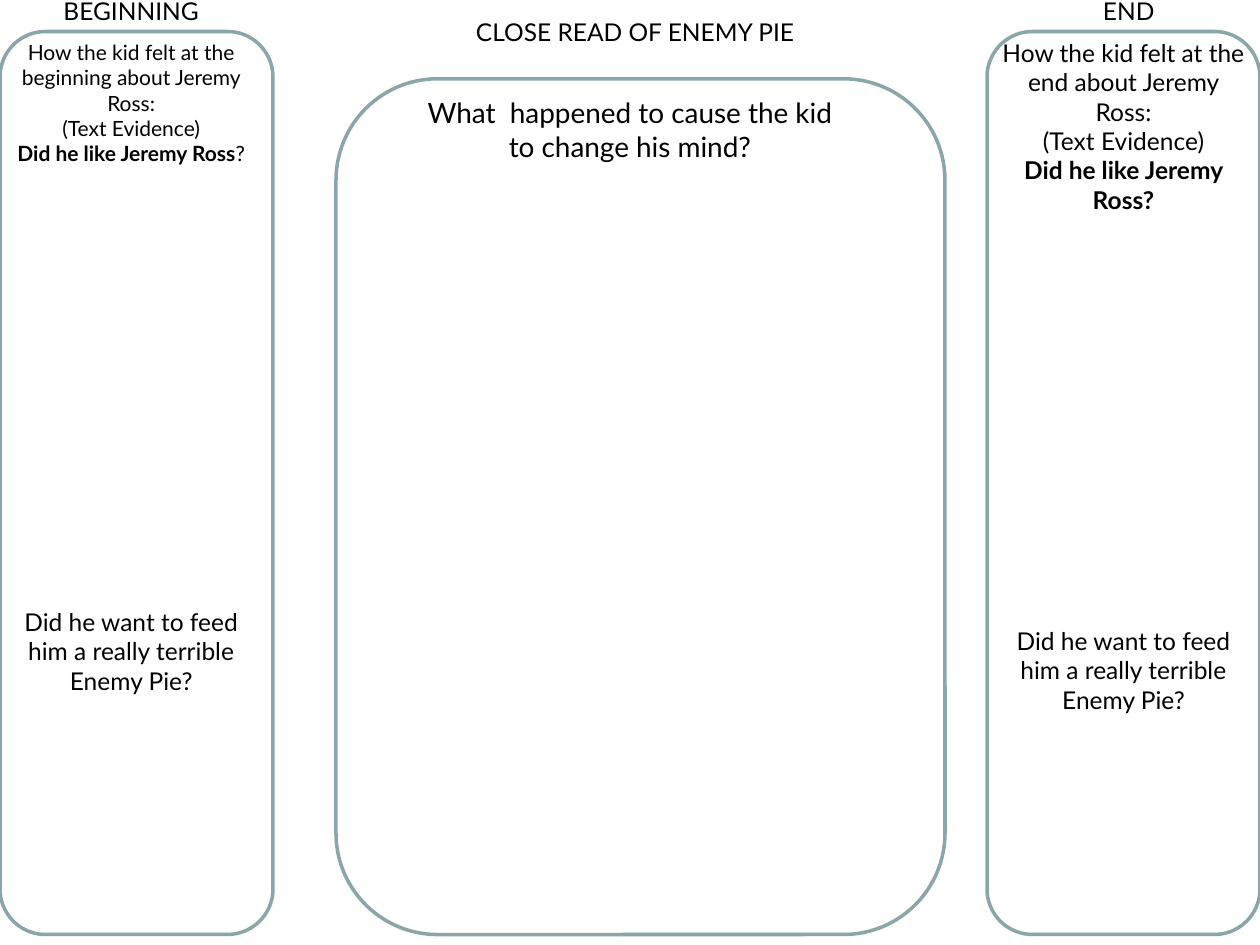
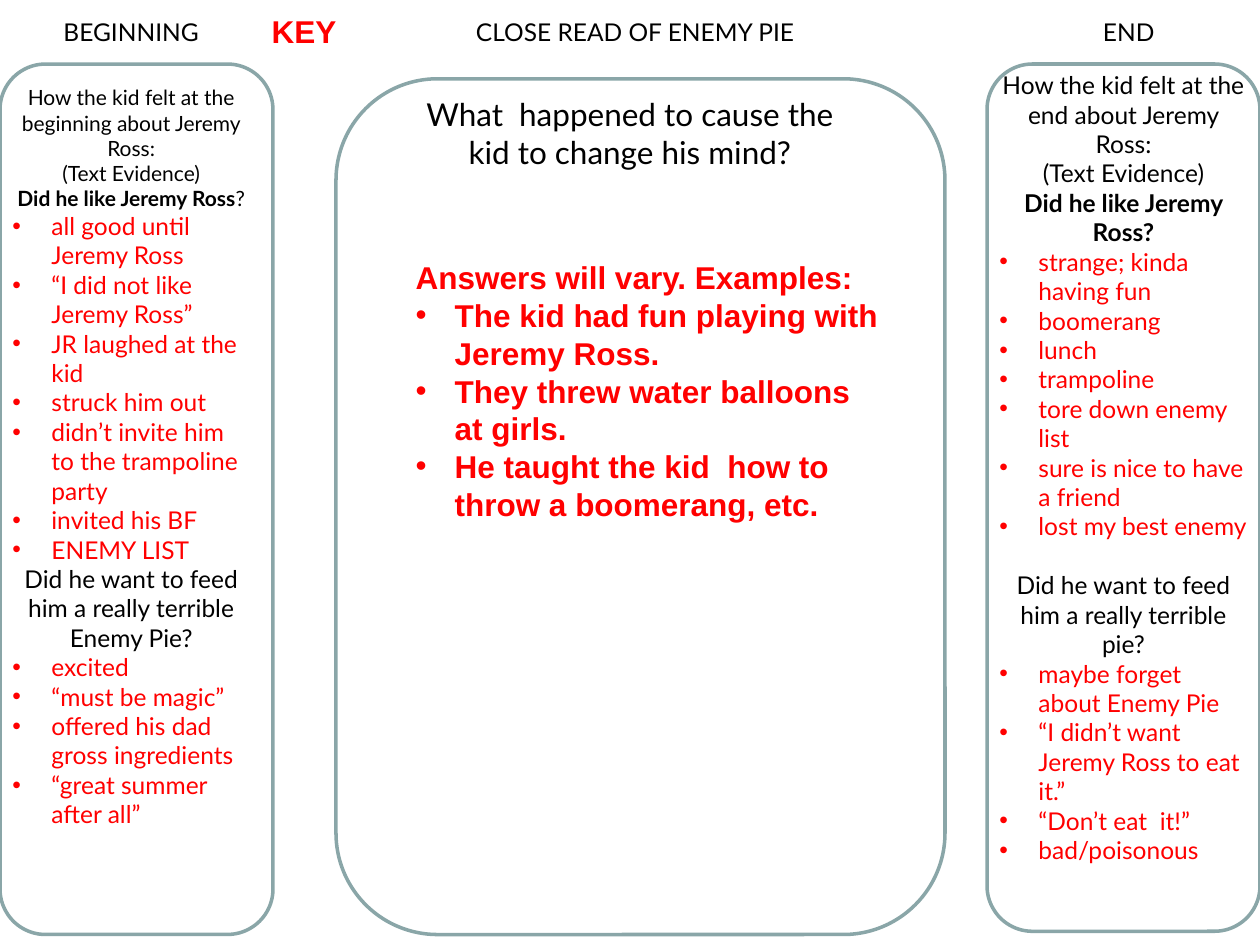
from dataclasses import dataclass, replace
from functools import partial

from lxml import etree
from pptx import Presentation
from pptx import util as u
from pptx.dml.color import RGBColor
from pptx.enum import shapes, text
from pptx.oxml.ns import qn

INK = RGBColor(0x00, 0x00, 0x00)
ANSWER_RED = RGBColor(0xFF, 0x00, 0x00)
FRAME_TEAL = RGBColor(0x8A, 0xA6, 0xA8)

# The page is a grid of 120 columns and 90 rows
WIDTH, HEIGHT = u.Inches(10), u.Inches(7.5)
COLS, ROWS = 120, 90
INDENT = u.Inches(0.31)
LINE_PT = 16.8  # height of one 14 pt line, in points
BOTTOM = 89     # row on which the frames end


@dataclass(frozen=True)
class Box:
    left: float
    top: float
    width: float
    height: float

    def inner(self, dx, dy, width, height):
        return Box(self.left + dx, self.top + dy, width, height)

    def place(self):
        return (int(self.left / COLS * WIDTH), int(self.top / ROWS * HEIGHT),
                int(self.width / COLS * WIDTH), int(self.height / ROWS * HEIGHT))


@dataclass(frozen=True)
class Line:
    words: str
    size: float = 14
    color: RGBColor = INK
    bold: bool = False
    face: str = "Lato"
    centred: bool = True
    bullet: bool = False
    lines_before: int = 0
    plain_end: str = ""


Answer = partial(Line, color=ANSWER_RED, centred=False, bullet=True)
BoldAnswer = partial(Answer, size=18, bold=True, face="Arial")


def add_bullet(paragraph):
    props = paragraph._p.get_or_add_pPr()
    props.set("marL", str(INDENT))
    props.set("indent", str(-INDENT))
    etree.SubElement(props, qn("a:buFont")).set("typeface", "Arial")
    etree.SubElement(props, qn("a:buChar")).set("char", "•")


def write(frame, lines, wrap=True):
    frame_format = {"word_wrap": wrap, "auto_size": text.MSO_AUTO_SIZE.NONE,
                    "vertical_anchor": text.MSO_ANCHOR.TOP}
    for name, value in frame_format.items():
        setattr(frame, name, value)
    for number, line in enumerate(lines):
        paragraph = frame.add_paragraph() if number else frame.paragraphs[0]
        paragraph.alignment = (text.PP_ALIGN.CENTER if line.centred
                               else text.PP_ALIGN.LEFT)
        if line.lines_before:
            paragraph.space_before = u.Pt(line.lines_before * LINE_PT)
        if line.bullet:
            add_bullet(paragraph)
        for words, bold in ((line.words, line.bold), (line.plain_end, False)):
            if not words:
                continue
            run = paragraph.add_run()
            run.text = words
            font_format = {"name": line.face, "size": u.Pt(line.size), "bold": bold}
            for name, value in font_format.items():
                setattr(run.font, name, value)
            run.font.color.rgb = line.color


def add_words(slide, box, lines, wrap=True):
    write(slide.shapes.add_textbox(*box.place()).text_frame, lines, wrap)


def add_frame(slide, box):
    frame = slide.shapes.add_shape(shapes.MSO_SHAPE.ROUNDED_RECTANGLE, *box.place())
    frame.shadow.inherit = False
    frame.fill.background()
    frame.line.color.rgb = FRAME_TEAL
    frame.line.width = u.Pt(2)


def add_title(slide, box):
    title = slide.shapes.title
    for name, value in zip(("left", "top", "width", "height"), box.place()):
        setattr(title, name, value)
    write(title.text_frame, [Line("CLOSE READ OF ENEMY PIE")])


def side_column(slide, box, heading, heading_box, words_box, lines):
    add_frame(slide, box)
    add_words(slide, heading_box, [Line(heading)])
    add_words(slide, words_box, lines)


def beginning_column(slide, box, heading_rise, words_drop, lines):
    side_column(slide, box, "BEGINNING", box.inner(0, -heading_rise, 25, 4),
                box.inner(0, words_drop, 25, box.height - words_drop), lines)


def end_column(slide, box, heading_rise, lines):
    side_column(slide, box, "END", box.inner(1, -heading_rise, 25, 4), box, lines)


def cause_panel(slide, box, size, answers=()):
    add_frame(slide, box)
    add_words(slide, box.inner(6, 1, 44, 8.5),
              [Line("What  happened to cause the kid to change his mind?", size)])
    if answers:
        add_words(slide, box.inner(6.4, 16.5, 46.5, 26.6), answers)


def worksheet(deck, top, heading_rise, words_drop, end_bottom, question_size,
              beginning, end, cause_answers=()):
    slide = deck.slides.add_slide(deck.slide_layouts[5])
    add_title(slide, Box(38, 1, 45, 4))
    beginning_column(slide, Box(0, top, 26, BOTTOM - top),
                     heading_rise, words_drop, beginning)
    cause_panel(slide, Box(32, 7.5, 58, BOTTOM - 7.5), question_size, cause_answers)
    end_column(slide, Box(94, top, 26, end_bottom - top), heading_rise, end)
    return slide


# Questions that both worksheets ask
EVIDENCE = Line("(Text Evidence)")
BEGINNING_FEELING = [
    Line("How the kid felt at the beginning about Jeremy Ross:", 12),
    replace(EVIDENCE, size=12),
    Line("Did he like Jeremy Ross", 12, bold=True, plain_end="?"),
]
END_FEELING = [
    Line("How the kid felt at the end about Jeremy Ross:"),
    EVIDENCE,
    Line("Did he like Jeremy Ross?", bold=True),
]
FEED = Line("Did he want to feed him a really terrible Enemy Pie?")
FEED_START = Line("Did he want to feed him a really terrible")

# Answers of the key
BEGINNING_LIKES = ["all good until Jeremy Ross", "“I did not like Jeremy Ross”",
                   "JR laughed at the kid", "struck him out",
                   "didn’t invite him to the trampoline party",
                   "invited his BF", "ENEMY LIST"]
BEGINNING_FEEDS = ["excited", "“must be magic”", "offered his dad gross ingredients",
                   "“great summer after all”"]
END_LIKES = ["strange; kinda having fun", "boomerang", "lunch", "trampoline",
             "tore down enemy list", "sure is nice to have a friend",
             "lost my best enemy"]
END_FEEDS = ["maybe forget about Enemy Pie", "“I didn’t want Jeremy Ross to eat it.”",
             "“Don’t eat  it!”", "bad/poisonous"]
CAUSES = ["The kid had fun playing with Jeremy Ross.",
          "They threw water balloons at girls.",
          "He taught the kid  how to throw a boomerang, etc."]


def blank_worksheet(deck):
    worksheet(deck, top=3, heading_rise=4, words_drop=0.2, end_bottom=BOTTOM,
              question_size=16,
              beginning=[*BEGINNING_FEELING, replace(FEED, lines_before=15)],
              end=[*END_FEELING, replace(FEED_START, lines_before=14),
                   Line("Enemy Pie?")])


def answer_key(deck):
    slide = worksheet(
        deck, top=6.1, heading_rise=5.1, words_drop=1.4, end_bottom=88.7,
        question_size=18,
        beginning=[*BEGINNING_FEELING, *map(Answer, BEGINNING_LIKES),
                   FEED, *map(Answer, BEGINNING_FEEDS)],
        end=[*END_FEELING, *map(Answer, END_LIKES),
             replace(FEED_START, lines_before=1), Line("pie?"),
             *map(Answer, END_FEEDS)],
        cause_answers=[BoldAnswer("Answers will vary. Examples:", bullet=False),
                       *map(BoldAnswer, CAUSES)])
    add_words(slide, Box(24.7, 0.6, 8.6, 4.8), [BoldAnswer("KEY", bullet=False)],
              wrap=False)


def main():
    deck = Presentation()
    deck.slide_width, deck.slide_height = WIDTH, HEIGHT
    blank_worksheet(deck)
    answer_key(deck)
    deck.save("out.pptx")


if __name__ == "__main__":
    main()
